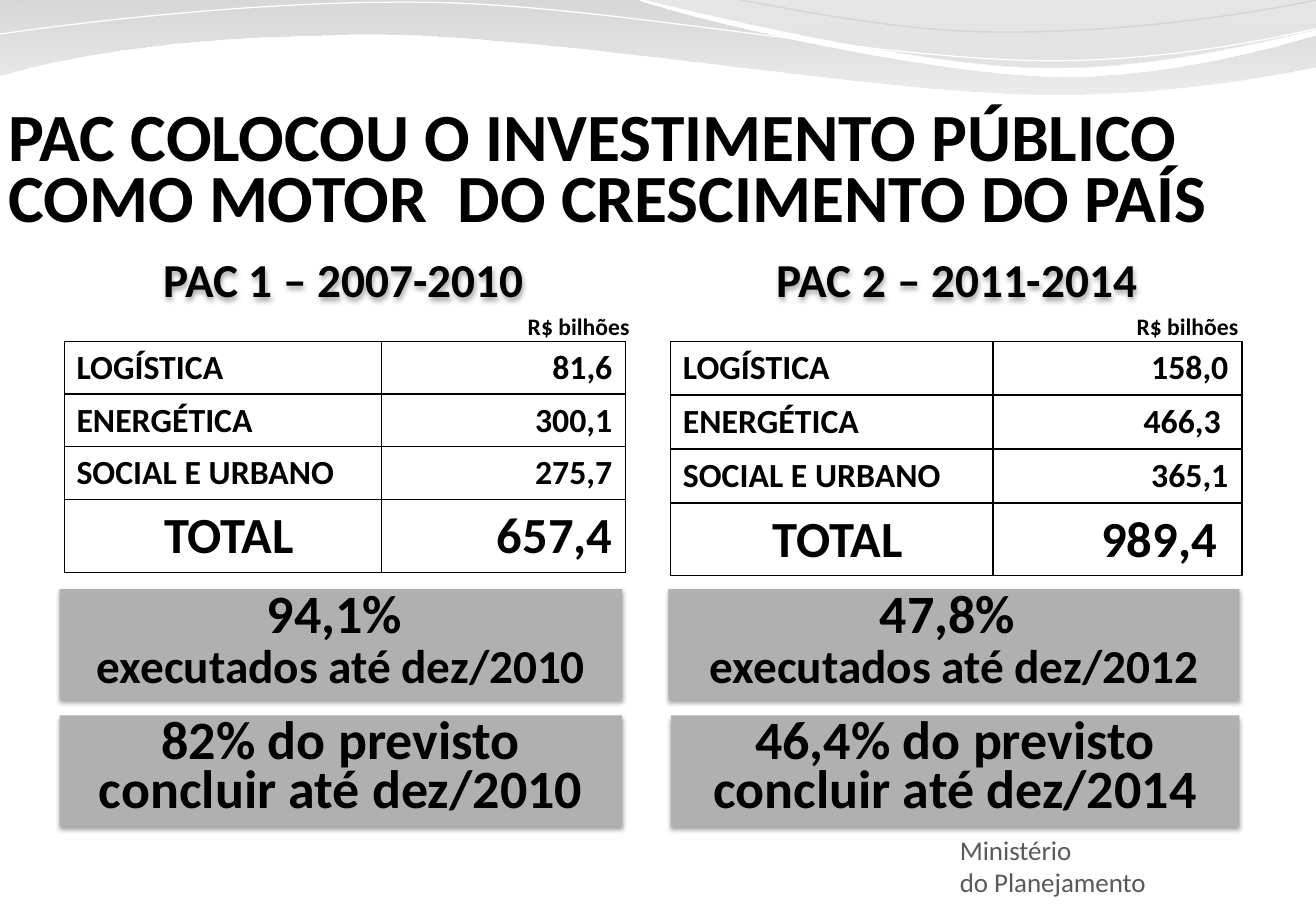
from lxml.etree import SubElement
from pptx import Presentation
from pptx.dml.color import RGBColor
from pptx.enum.shapes import MSO_SHAPE as Shape
from pptx.enum.text import MSO_ANCHOR as Anchor, MSO_AUTO_SIZE as AutoSize, PP_ALIGN as Align
from pptx.oxml import parse_xml
from pptx.oxml.ns import nsdecls, qn
from pptx.util import Inches, Pt

COLORS = {"text": "000000", "ministry": "595959", "box": "B0B0B0", "border": "000000",
          "thin_grey": "D6D6D6", "thin_white": "FFFFFF"}
SLIDE_W, SLIDE_H = 10.83, 7.5
TOTAL_ROW = 0.6


def write_line(paragraph, text, size, align=Align.LEFT, color="text", bold=True, spacing=None):
    paragraph.text = text
    paragraph.alignment = align
    paragraph.space_before = Pt(0)
    if spacing:
        paragraph.line_spacing = spacing
    font = paragraph.font
    font.name, font.size, font.bold = "Calibri", Pt(size), bold
    font.color.rgb = RGBColor.from_string(COLORS[color])


def drop_shadow(shape):
    """Soft black shadow straight below; without a fill it falls on the text."""
    shape.shadow.inherit = False
    effects = shape.element.spPr.find(qn("a:effectLst"))
    effects.append(parse_xml(
        f'<a:outerShdw {nsdecls("a")} blurRad="{Pt(3.1)}" dist="{Pt(1.8)}" dir="5400000" '
        'rotWithShape="0"><a:srgbClr val="000000"><a:alpha val="35000"/></a:srgbClr></a:outerShdw>'))


prs = Presentation()
prs.slide_width, prs.slide_height = Inches(SLIDE_W), Inches(SLIDE_H)
slide = prs.slides.add_slide(prs.slide_layouts[5])
shapes = slide.shapes

# Header waves: a start point, then straight (x, y) or Bézier (x1, y1, x2, y2, x, y) segments.
# Gradient stops are (position, colour, opacity in percent).
waves = [
    {"start": (-0.39, -0.11), "stops": [(0, "A3A3A3", 45), (1, "DDDDDD", 55)],
     "segments": [(4.94, -0.11), (5.36, 0.09, 7.63, 0.63, 8.78, 0.63),
                  (9.93, 0.63, 11.2, 0.19, 11.7, 0), (11.71, 0.1, 11.71, 0.21, 11.71, 0.32),
                  (11.5, 0.41, 10.13, 0.78, 8.63, 0.78), (7.13, 0.77, 4.23, 0.22, 2.72, 0.29),
                  (1.17, 0.31, 0.2, 0.53, -0.4, 0.75), (-0.4, 0.3, -0.39, 0.33, -0.39, -0.11)]},
    {"start": (4.88, -0.12), "stops": [(0, "B4B4B4", 30), (0.8, "C3C3C3", 45)],
     "segments": [(5.25, 0, 7.42, 0.52, 8.51, 0.55), (9.6, 0.59, 10.93, 0.21, 11.41, 0.1),
                  (11.41, -0.11), (4.88, -0.12)]},
    {"start": (-0.05, 0.09), "line": ("thin_grey", 0.85),
     "segments": [(0.5, -0.14, 1.86, -0.48, 3.21, -0.45), (4.55, -0.42, 6.62, 0.22, 8.02, 0.26),
                  (9.43, 0.3, 10.95, 0.02, 11.63, -0.2)]},
    {"start": (-0.25, 0.32), "line": ("thin_white", 0.75),
     "segments": [(0.28, 0.23, 2.09, -0.01, 3.58, 0.02), (5.08, 0.05, 7.31, 0.51, 8.7, 0.5),
                  (10.09, 0.49, 11.26, 0.13, 11.93, -0.04)]},
]
for wave in waves:
    builder = shapes.build_freeform(*map(Inches, wave["start"]))
    builder.add_line_segments(
        [(Inches(x), Inches(y)) for segment in wave["segments"]
         for x, y in zip(segment[::2], segment[1::2])], close="stops" in wave)
    ribbon = builder.convert_to_shape()
    ribbon.shadow.inherit = False

    # Join the three points of each Bézier segment into one curve
    steps = iter(list(ribbon.element.spPr.iter(qn("a:lnTo"))))
    for segment in wave["segments"]:
        first = next(steps)
        if len(segment) == 6:
            first.tag = qn("a:cubicBezTo")
            for step in (next(steps), next(steps)):
                first.append(step[0])
                step.getparent().remove(step)

    if "line" in wave:
        color, width = wave["line"]
        ribbon.fill.background()
        ribbon.line.color.rgb = RGBColor.from_string(COLORS[color])
        ribbon.line.width = Pt(width)
        continue
    ribbon.line.fill.background()
    ribbon.fill.gradient()
    ribbon.fill.gradient_angle = 270
    for stop, (position, color, _) in zip(ribbon.fill.gradient_stops, wave["stops"]):
        stop.position = position
        stop.color.rgb = RGBColor.from_string(color)
    for element, (_, _, opacity) in zip(ribbon.element.spPr.iter(qn("a:srgbClr")), wave["stops"]):
        SubElement(element, qn("a:alpha"), val=str(opacity * 1000))

title = shapes.title
title.left, title.top, title.width, title.height = map(Inches, (-0.03, 0.88, SLIDE_W, 1.11))
title.text_frame.auto_size = AutoSize.NONE
title.text_frame.vertical_anchor = Anchor.TOP
write_line(title.text_frame.paragraphs[0],
           "PAC COLOCOU O INVESTIMENTO PÚBLICO COMO MOTOR  DO CRESCIMENTO DO PAÍS", 40, spacing=0.75)

ministry = shapes.add_textbox(*map(Inches, (7.8, 6.81, 1.95, 0.64))).text_frame
ministry.word_wrap = True
for index, line in enumerate(("Ministério", "do Planejamento")):
    paragraph = ministry.add_paragraph() if index else ministry.paragraphs[0]
    write_line(paragraph, line, 16, color="ministry", bold=False)

areas = ("LOGÍSTICA", "ENERGÉTICA", "SOCIAL E URBANO", "TOTAL")
programs = [
    {"heading": "PAC 1 – 2007-2010", "heading_left": 1.22, "unit_left": 4.23,
     "table_left": 0.53, "columns": (2.61, 2.01), "table_height": 1.9,
     "values": ("81,6", "300,1", "275,7", "657,4"),
     "boxes": [(0.49, 4.63, [("94,1% ", 32), ("executados até dez/2010", 28)]),
               (0.49, 4.63, [("82% do previsto concluir até dez/2010", 32)])]},
    {"heading": "PAC 2 – 2011-2014", "heading_left": 6.27, "unit_left": 9.24,
     "table_left": 5.52, "columns": (2.65, 2.05), "table_height": 1.93,
     "values": ("158,0", "466,3 ", "365,1", "989,4 "),
     "boxes": [(5.5, 4.7, [("47,8% ", 32), ("executados até dez/2012", 28)]),
               (5.52, 4.68, [("46,4% do previsto concluir até dez/2014", 32)])]},
]
for program in programs:
    heading = shapes.add_textbox(*map(Inches, (program["heading_left"], 2.01, 3.21, 0.57)))
    heading.text_frame.word_wrap = False
    write_line(heading.text_frame.paragraphs[0], program["heading"], 28, Align.CENTER)
    drop_shadow(heading)

    unit = shapes.add_textbox(*map(Inches, (program["unit_left"], 2.52, 1.05, 0.34)))
    unit.text_frame.word_wrap = False
    write_line(unit.text_frame.paragraphs[0], "R$ bilhões", 14, Align.RIGHT)

    area_row = (program["table_height"] - TOTAL_ROW) / 3
    investments = shapes.add_table(
        len(areas), 2, Inches(program["table_left"]), Inches(2.81),
        Inches(sum(program["columns"])), Inches(program["table_height"])).table
    investments.first_row = investments.horz_banding = False
    for column, width in zip(investments.columns, program["columns"]):
        column.width = Inches(width)
    for r, (area, value) in enumerate(zip(areas, program["values"])):
        is_total = area == "TOTAL"
        investments.rows[r].height = Inches(TOTAL_ROW if is_total else area_row)
        area_align = Align.CENTER if is_total else Align.LEFT
        cells = ((area, area_align, 0.1, 0), (value, Align.RIGHT, 0.43, 0.11))
        for c, (text, align, left, right) in enumerate(cells):
            cell = investments.cell(r, c)
            cell.fill.background()
            cell.vertical_anchor = Anchor.MIDDLE
            cell.margin_left, cell.margin_right = Inches(left), Inches(right)
            write_line(cell.text_frame.paragraphs[0], text, 30 if is_total else 20, align)
            for order, side in enumerate("LRTB"):
                cell._tc.tcPr.insert(order, parse_xml(
                    f'<a:ln{side} {nsdecls("a")} w="{Pt(1)}"><a:solidFill>'
                    f'<a:srgbClr val="{COLORS["border"]}"/></a:solidFill></a:ln{side}>'))

    for index, (left, width, lines) in enumerate(program["boxes"]):
        box = shapes.add_shape(
            Shape.RECTANGLE, *map(Inches, (left, 4.85 + 1.04 * index, width, 0.91)))
        box.fill.solid()
        box.fill.fore_color.rgb = RGBColor.from_string(COLORS["box"])
        box.line.fill.background()
        drop_shadow(box)
        frame = box.text_frame
        frame.word_wrap = True
        frame.vertical_anchor = Anchor.TOP
        for n, (text, size) in enumerate(lines):
            paragraph = frame.add_paragraph() if n else frame.paragraphs[0]
            write_line(paragraph, text, size, Align.CENTER, spacing=Pt(29))

prs.save("out.pptx")
